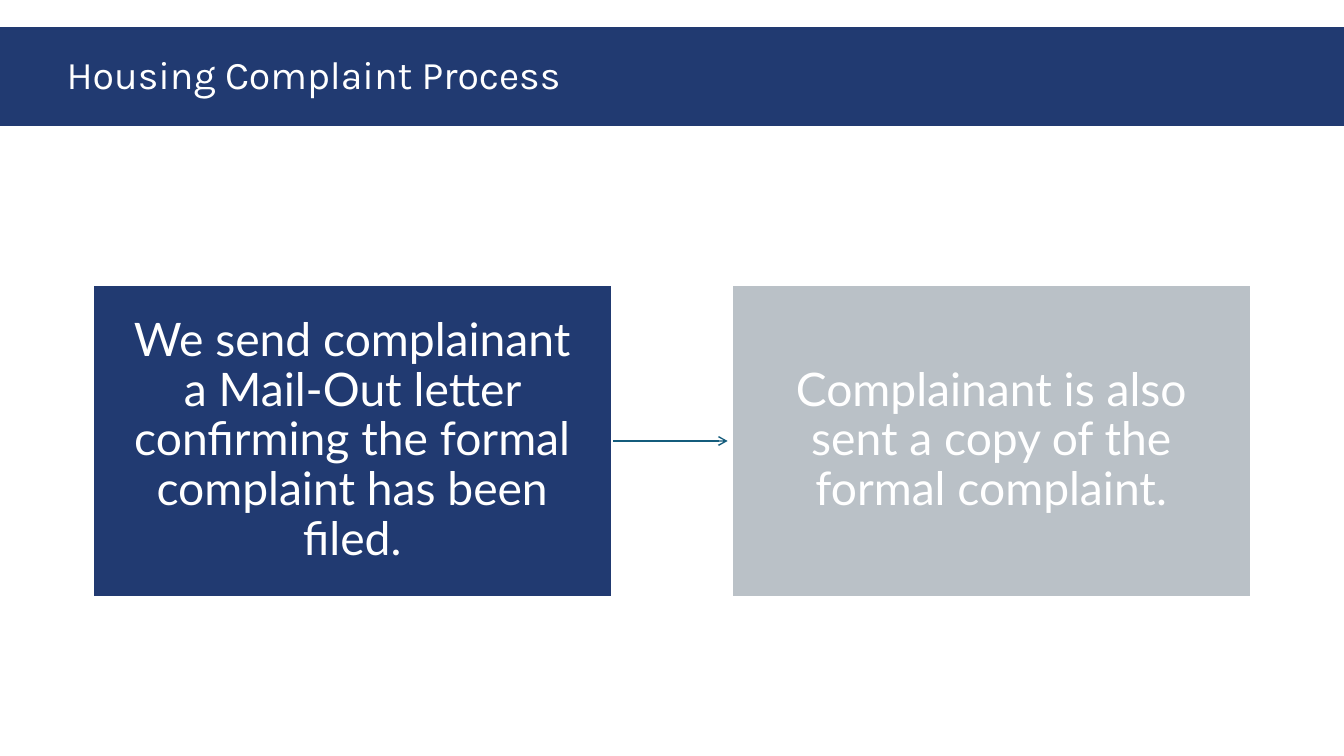
"""Build the Housing Complaint Process slide."""
from lxml import etree
from pptx import Presentation
from pptx.dml.color import RGBColor
from pptx.enum.shapes import MSO_CONNECTOR as Connector, MSO_SHAPE as Shape
from pptx.enum.text import MSO_ANCHOR as Anchor, PP_ALIGN as Align
from pptx.oxml.ns import qn
from pptx.util import Pt

NAVY = RGBColor(0x21, 0x3A, 0x71)
GRAY = RGBColor(0xBA, 0xC1, 0xC7)
TEAL = RGBColor(0x14, 0x5C, 0x7C)
WHITE = RGBColor(0xFF, 0xFF, 0xFF)


class ProcessSlide:
    """Hold the slide and its style, and draw each kind of element."""

    heading_font = "Karla"
    body_font = "Lato"

    def __init__(self, deck):
        """Add a blank slide to the deck."""
        self.slide = deck.slides.add_slide(deck.slide_layouts[6])

    def panel(self, left, top, width, height, fill):
        """Draw a filled rectangle without outline."""
        panel = self.slide.shapes.add_shape(
            Shape.RECTANGLE, Pt(left), Pt(top), Pt(width), Pt(height))
        panel.shadow.inherit = False
        panel.fill.solid()
        panel.fill.fore_color.rgb = fill
        panel.line.fill.background()
        return panel

    def label(self, panel, wording, font, size, align, margins):
        """Set one white paragraph in a panel."""
        frame = panel.text_frame
        frame.word_wrap = True
        frame.vertical_anchor = Anchor.MIDDLE
        side, edge = margins
        frame.margin_left = frame.margin_right = Pt(side)
        frame.margin_top = frame.margin_bottom = Pt(edge)
        paragraph = frame.paragraphs[0]
        paragraph.alignment = align
        paragraph.line_spacing = 0.9
        run = paragraph.add_run()
        run.text = wording
        run.font.name = font
        run.font.size = Pt(size)
        run.font.color.rgb = WHITE

    def title(self, wording):
        """Draw the title band across the slide."""
        band = self.panel(0, 19.44, 960, 70.56, NAVY)
        self.label(band, wording, self.heading_font, 28, Align.LEFT, (47.5, 3.6))

    def step(self, left, top, width, height, fill, wording):
        """Draw one step of the process."""
        box = self.panel(left, top, width, height, fill)
        box.line.color.rgb = WHITE
        box.line.width = Pt(1.5)
        self.label(box, wording, self.body_font, 33, Align.CENTER, (18, 19.5))

    def arrow(self, start, end, y):
        """Draw a horizontal arrow between two steps."""
        arrow = self.slide.shapes.add_connector(
            Connector.STRAIGHT, Pt(start), Pt(y), Pt(end), Pt(y))
        arrow.line.color.rgb = TEAL
        arrow.line.width = Pt(1)
        properties = arrow.element.spPr
        etree.SubElement(properties.find(qn("a:ln")), qn("a:tailEnd"), type="arrow")
        etree.SubElement(properties, qn("a:effectLst"))


def main():
    """Build and save the deck."""
    deck = Presentation()
    deck.slide_width, deck.slide_height = Pt(960), Pt(540)
    process = ProcessSlide(deck)
    process.title("Housing Complaint Process")

    left, top, width, height, gap = 66.25, 203.75, 370.75, 222.5, 85.75
    steps = [
        (NAVY, "We send complainant a Mail-Out letter confirming "
               "the formal complaint has been filed."),
        (GRAY, "Complainant is also sent a copy of the formal complaint."),
    ]
    process.arrow(left + width, left + width + gap - 3, top + height / 2)
    for index, (fill, wording) in enumerate(steps):
        process.step(left + index * (width + gap), top, width, height, fill, wording)
    deck.save("out.pptx")


if __name__ == "__main__":
    main()
